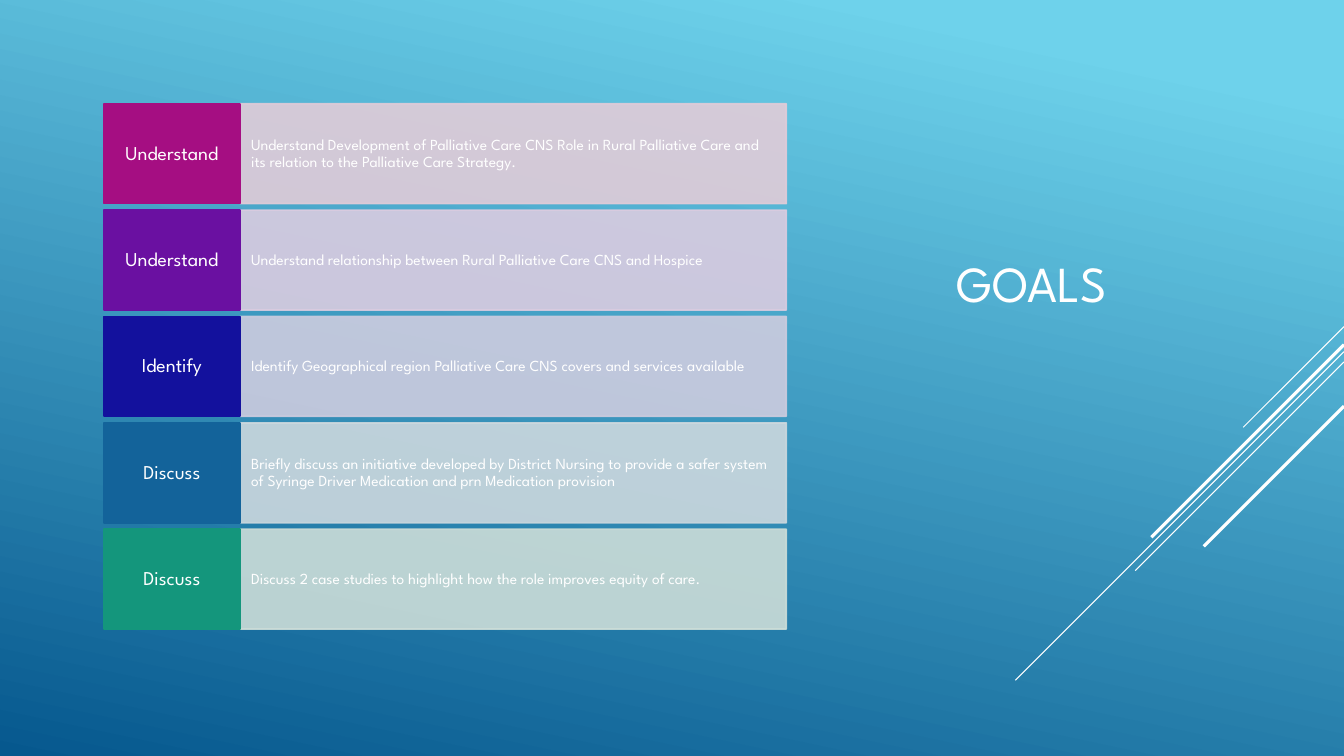
from dataclasses import dataclass

from lxml import etree
from pptx import Presentation
from pptx.dml.color import RGBColor
from pptx.enum.shapes import MSO_CONNECTOR, MSO_SHAPE
from pptx.enum.text import MSO_ANCHOR, PP_ALIGN
from pptx.oxml.ns import qn
from pptx.util import Inches, Pt

RECT = MSO_SHAPE.RECTANGLE
STRAIGHT = MSO_CONNECTOR.STRAIGHT
MIDDLE = MSO_ANCHOR.MIDDLE
LEFT, CENTER = PP_ALIGN.LEFT, PP_ALIGN.CENTER


@dataclass(frozen=True)
class Theme:
    font: str = "League Spartan"
    text: str = "FFFFFF"
    sky: str = "6ED2EB"
    sea: str = "06588E"
    title_size: float = 36
    label_size: float = 14
    body_size: float = 11
    border: float = 1.25
    thin: float = 0.75
    thick: float = 2.25


class Deck:
    """Draws on one slide; the grid has 100 columns and 100 rows."""

    def __init__(self, prs, theme):
        self.theme = theme
        self.col = prs.slide_width / 100
        self.row = prs.slide_height / 100
        self.s = prs.slides.add_slide(prs.slide_layouts[6])

    def box(self, x, y, w, h):
        return (round(x * self.col), round(y * self.row),
                round(w * self.col), round(h * self.row))

    def backdrop(self, angle):
        sp = self.s.shapes.add_shape(RECT, *self.box(0, 0, 100, 100))
        sp.shadow.inherit = False
        sp.line.fill.background()
        sp.fill.gradient()
        sp.fill.gradient_angle = angle
        stops = ((0.1, self.theme.sky), (1, self.theme.sea))
        for stop, (position, color) in zip(sp.fill.gradient_stops, stops):
            stop.position = position
            stop.color.rgb = RGBColor.from_string(color)

    def ray(self, y, run, width):
        """Diagonal at 45 degrees, falling leftwards from the right edge."""
        drop = run * self.col / self.row
        x1, y1, x2, y2 = self.box(100, y, 100 - run, y + drop)
        c = self.s.shapes.add_connector(STRAIGHT, x1, y1, x2, y2)
        c.line.width = Pt(width)
        c.line.color.rgb = RGBColor.from_string(self.theme.text)
        etree.SubElement(c._element.spPr, qn("a:effectLst"))

    def set_text(self, tf, text, size, align, spacing=None, inset=(0.1, 0.05)):
        tf.word_wrap = True
        tf.vertical_anchor = MIDDLE
        tf.margin_left = tf.margin_right = Inches(inset[0])
        tf.margin_top = tf.margin_bottom = Inches(inset[1])
        tf.text = text
        p = tf.paragraphs[0]
        p.alignment = align
        p.line_spacing = spacing
        r = p.runs[0]
        r.font.name = self.theme.font
        r.font.size = Pt(size)
        r.font.color.rgb = RGBColor.from_string(self.theme.text)

    def title(self, text, *at):
        sp = self.s.shapes.add_textbox(*self.box(*at))
        self.set_text(sp.text_frame, text, self.theme.title_size, LEFT)

    def panel(self, text, at, color, size, align, inset, opacity=100):
        sp = self.s.shapes.add_shape(RECT, *self.box(*at))
        sp.shadow.inherit = False
        sp.fill.solid()
        sp.fill.fore_color.rgb = RGBColor.from_string(color)
        sp.line.width = Pt(self.theme.border)
        sp.line.color.rgb = RGBColor.from_string(color)
        if opacity < 100:
            for clr in sp._element.spPr.iter(qn("a:srgbClr")):
                etree.SubElement(clr, qn("a:alpha"), val=str(opacity * 1000))
        self.set_text(sp.text_frame, text, size, align, 0.9, inset)


# Label, label colour, detail, detail colour
GOALS = (
    ("Understand", "A50E82",
     "Understand Development of Palliative Care CNS Role in Rural Palliative "
     "Care and its relation to the Palliative Care Strategy.", "E1CCD8"),
    ("Understand", "6A10A1",
     "Understand relationship between Rural Palliative Care CNS and Hospice",
     "DACCE0"),
    ("Identify", "13119D",
     "Identify Geographical region Palliative Care CNS covers and services "
     "available", "CDCCDF"),
    ("Discuss", "13639A",
     "Briefly discuss an initiative developed by District Nursing to provide "
     "a safer system of Syringe Driver Medication and prn Medication "
     "provision", "CCD8DE"),
    ("Discuss", "14967C",
     "Discuss 2 case studies to highlight how the role improves equity of "
     "care.", "CCDDD8"),
)
TOP, PITCH, HEIGHT = 13.73, 14.07, 13.2
LABEL_X, LABEL_W, DETAIL_W = 7.73, 10.13, 40.65


def main():
    theme = Theme()
    prs = Presentation()
    prs.slide_width, prs.slide_height = Inches(13.33), Inches(7.5)
    deck = Deck(prs, theme)

    # Background and diagonal rays
    deck.backdrop(258)
    for y, run, width in ((43.2, 7.5, theme.thin), (46.53, 24.45, theme.thin),
                          (47.87, 15.53, theme.thin),
                          (45.6, 14.33, theme.thick),
                          (53.73, 10.43, theme.thick)):
        deck.ray(y, run, width)

    deck.title("GOALS", 70.43, TOP, 24.98, 47.33)

    # Goal rows
    for i, (label, color, detail, tint) in enumerate(GOALS):
        y = TOP + i * PITCH
        deck.panel(detail, (LABEL_X + LABEL_W, y, DETAIL_W, HEIGHT), tint,
                   theme.body_size, LEFT, (0.11, 0.25), opacity=90)
        deck.panel(label, (LABEL_X, y, LABEL_W, HEIGHT), color,
                   theme.label_size, CENTER, (0.07, 0.1))

    prs.save("out.pptx")


if __name__ == "__main__":
    main()
